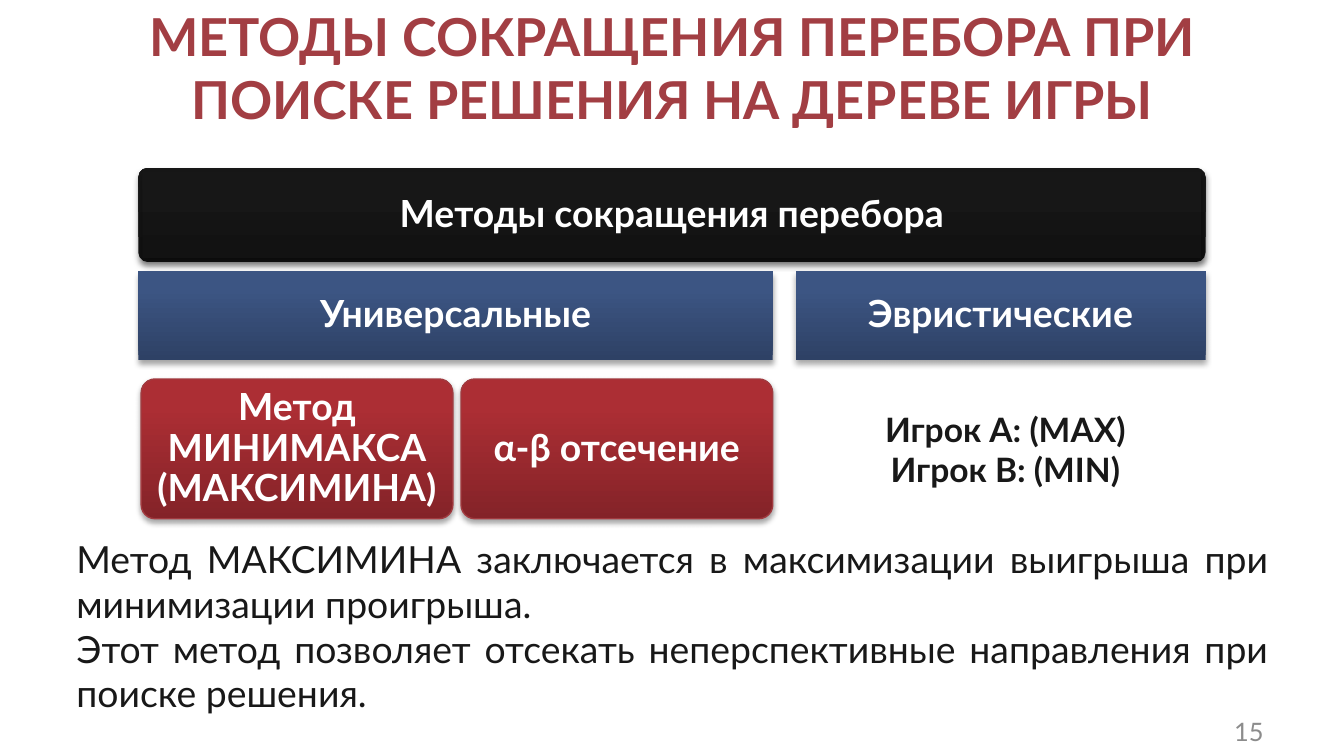
from dataclasses import dataclass

from lxml import etree
from pptx import Presentation
from pptx.dml.color import RGBColor
from pptx.enum.shapes import MSO_SHAPE
from pptx.enum.text import MSO_ANCHOR, MSO_AUTO_SIZE, PP_ALIGN
from pptx.oxml.ns import qn
from pptx.util import Inches, Pt

RECT, ROUNDED = MSO_SHAPE.RECTANGLE, MSO_SHAPE.ROUNDED_RECTANGLE
CENTER, RIGHT, JUSTIFY = PP_ALIGN.CENTER, PP_ALIGN.RIGHT, PP_ALIGN.JUSTIFY
MIDDLE, TOP = MSO_ANCHOR.MIDDLE, MSO_ANCHOR.TOP
GROW, FIXED = MSO_AUTO_SIZE.SHAPE_TO_FIT_TEXT, MSO_AUTO_SIZE.NONE

WIDTH = 10
HEIGHT = WIDTH * 9 / 16
FONT = "Lato"
INK, WHITE = "181818", "FFFFFF"
# Gradient colours from bottom to top, at 0, 80 and 100 percent
BLACK = ("121212", "171717", "171717")
BLUE = ("2E4165", "3C5583", "3A5585")
RED = ("842328", "AC2E34", "AF2B32")
STOPS = (0, 80, 100)
PAD = 0.03


@dataclass
class Block:
    text: str
    x: float
    y: float
    w: float
    h: float
    colors: tuple
    rounded: bool = False
    border: str = ""
    filled_label: bool = False


def rgb(value: str) -> RGBColor:
    return RGBColor.from_string(value)


def sub(parent, tag: str, **attrs):
    return etree.SubElement(parent, qn(tag), {k: str(v) for k, v in attrs.items()})


def write(shape, lines: list, size: float, color: str, bold: bool = False,
          align=CENTER, anchor=MIDDLE, auto_size=FIXED, spacing=None, margin=None) -> None:
    tf = shape.text_frame
    frame = {"word_wrap": True, "vertical_anchor": anchor, "auto_size": auto_size}
    if margin is not None:
        frame.update({f"margin_{side}": Inches(margin)
                      for side in ("left", "top", "right", "bottom")})
    for name, value in frame.items():
        setattr(tf, name, value)
    for i, line in enumerate(lines):
        p = tf.paragraphs[0] if i == 0 else tf.add_paragraph()
        p.alignment = align
        if spacing:
            p.line_spacing = spacing
        r = p.add_run()
        r.text = line
        for name, value in {"name": FONT, "size": Pt(size), "bold": bold}.items():
            setattr(r.font, name, value)
        r.font.color.rgb = rgb(color)


def add_text(s, box: tuple, lines: list, size: float, color: str, **style) -> None:
    write(s.shapes.add_textbox(*map(Inches, box)), lines, size, color, **style)


def add_panel(s, kind, box: tuple, colors: tuple, border: str = ""):
    sp = s.shapes.add_shape(kind, *map(Inches, box))
    if kind == ROUNDED:
        sp.adjustments[0] = 0.1
    # Three-stop gradient running upwards
    sp.fill.gradient()
    grad = sp._element.spPr.find(qn("a:gradFill"))
    for child in list(grad):
        grad.remove(child)
    stops = sub(grad, "a:gsLst")
    for pos, color in zip(STOPS, colors):
        sub(sub(stops, "a:gs", pos=pos * 1000), "a:srgbClr", val=color)
    sub(grad, "a:lin", ang=270 * 60000, scaled=0)
    if border:
        sp.line.color.rgb = rgb(border)
        sp.line.width = Pt(0.75)
    else:
        sp.line.fill.background()
    # Soft shadow below
    sp.shadow.inherit = False
    effects = sp._element.spPr.find(qn("a:effectLst"))
    shadow = sub(effects, "a:outerShdw", blurRad=Pt(3.1), dist=Pt(1.8),
                 dir=90 * 60000, rotWithShape=0)
    sub(sub(shadow, "a:srgbClr", val="000000"), "a:alpha", val=35000)
    return sp


def add_block(s, b: Block) -> None:
    label = add_panel(s, ROUNDED if b.rounded else RECT,
                      (b.x, b.y, b.w, b.h), b.colors, b.border)
    if b.rounded:
        inner = (b.x + PAD, b.y + PAD, b.w - 2 * PAD, b.h - 2 * PAD)
        label = (add_panel(s, RECT, inner, b.colors) if b.filled_label
                 else s.shapes.add_textbox(*map(Inches, inner)))
    write(label, [b.text], 20, WHITE, bold=True, spacing=0.9, margin=0.04)


BLOCKS = [
    Block("Методы сокращения перебора", 1.03, 1.25, 7.94, 0.7, BLACK,
          rounded=True, filled_label=True),
    Block("Универсальные", 1.03, 2.02, 4.72, 0.66, BLUE),
    Block("Эвристические", 5.92, 2.02, 3.05, 0.66, BLUE),
] + [
    Block(text, 1.05 + i * 2.38, 2.82, 2.32, 1.04, RED, rounded=True, border="A13A3F")
    for i, text in enumerate(("Метод МИНИМАКСА (МАКСИМИНА)", "α-β отсечение"))
]


def main() -> None:
    prs = Presentation()
    prs.slide_width, prs.slide_height = Inches(WIDTH), Inches(HEIGHT)
    s = prs.slides.add_slide(prs.slide_layouts[5])

    # Title
    title = s.shapes.title
    title.left, title.top, title.width, title.height = map(Inches, (0.5, 0.15, 9, 0.7))
    write(title, ["МЕТОДЫ СОКРАЩЕНИЯ ПЕРЕБОРА ПРИ ПОИСКЕ РЕШЕНИЯ НА ДЕРЕВЕ ИГРЫ"],
          28, "A23E43", bold=True)

    # Hierarchy of methods
    for block in BLOCKS:
        add_block(s, block)

    # Explanation, players and slide number
    add_text(s, (0.47, 3.94, 9.07, 1.45),
             ["Метод МАКСИМИНА заключается в максимизации выигрыша при минимизации проигрыша.",
              "Этот метод позволяет отсекать неперспективные направления при поиске решения."],
             20, INK, align=JUSTIFY, anchor=TOP, auto_size=GROW)
    add_text(s, (5.77, 2.99, 3.42, 0.71), ["Игрок А: (MAX)", "Игрок В: (MIN)"],
             18, INK, bold=True, anchor=TOP, auto_size=GROW)
    add_text(s, (8.94, 5.29, 0.56, 0.3), ["15"], 13.6, "8C8C8C", align=RIGHT)

    prs.save("out.pptx")


if __name__ == "__main__":
    main()
